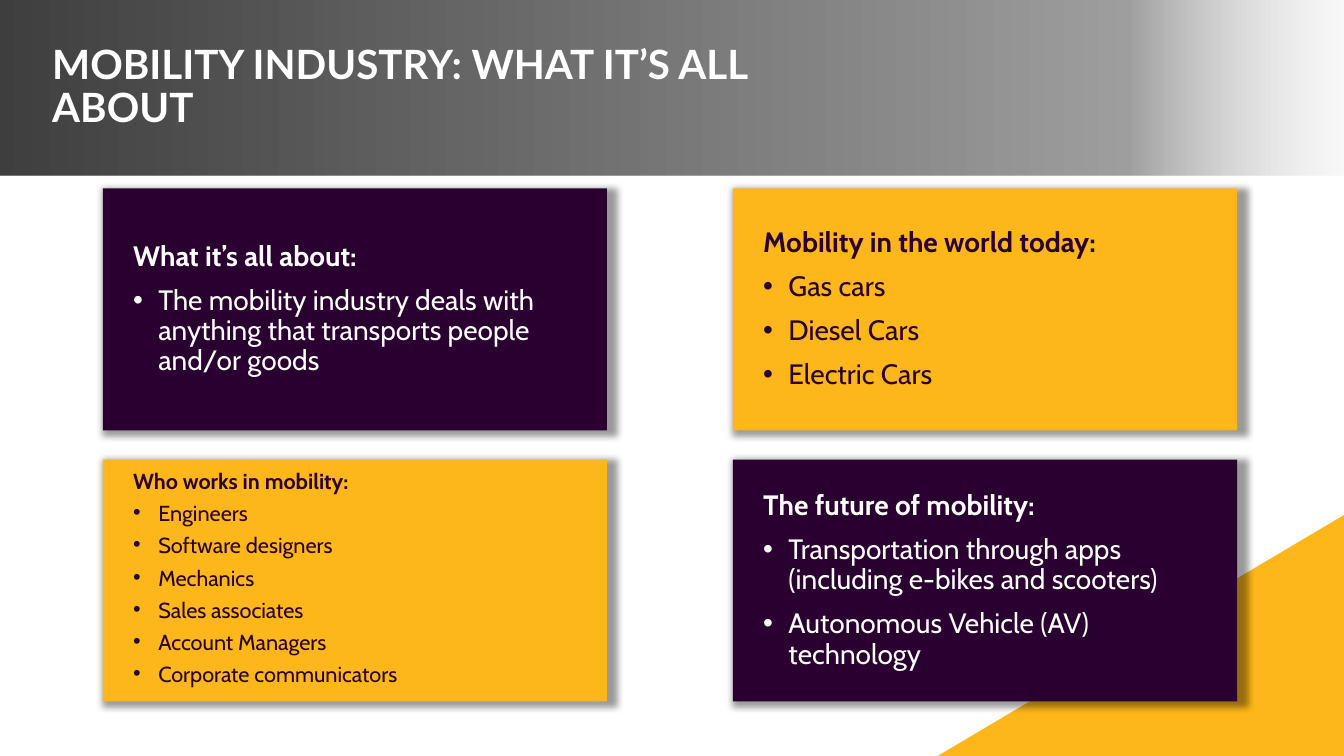
from pptx import Presentation
from pptx.dml.color import RGBColor as RGB
from pptx.enum.shapes import MSO_SHAPE as Kind
from pptx.enum.text import MSO_ANCHOR as Anchor, PP_ALIGN as Align
from pptx.oxml import parse_xml
from pptx.oxml.ns import nsdecls, qn
from pptx.util import Inches, Pt

TITLE = "MOBILITY INDUSTRY: WHAT IT’S ALL ABOUT"
CARDS = [
    ("What it’s all about:", [
        "The mobility industry deals with anything that transports people and/or goods",
    ]),
    ("Mobility in the world today:", ["Gas cars", "Diesel Cars", "Electric Cars"]),
    ("Who works in mobility:", [
        "Engineers", "Software designers", "Mechanics",
        "Sales associates", "Account Managers", "Corporate communicators",
    ]),
    ("The future of mobility:", [
        "Transportation through apps (including e-bikes and scooters)",
        "Autonomous Vehicle (AV) technology",
    ]),
]
FADE = [(0, "000000", 75), (84, "808080", 75), (100, "E7E6E6", 25)]


class Theme:
    white, plum, gold = "FFFFFF", "29002F", "FDB71A"
    head, body = "Lato", "Cabin"
    title, text, small = 28.8, 20, 15.5
    loose, tight, gap = 0.9, 0.7, 10


WIDE, HIGH = 13.33, 7.5
LEFT, TOP = 1.02, 1.87
CARD_W, CARD_H = 5, 2.4
STEP_X, STEP_Y = 6.25, 2.69
DENSE = 5


def add_block(slide, kind, x, y, w, h, color):
    block = slide.shapes.add_shape(kind, Inches(x), Inches(y), Inches(w), Inches(h))
    block.shadow.inherit = False
    block.line.fill.background()
    block.fill.solid()
    block.fill.fore_color.rgb = RGB.from_string(color)
    return block


def fade(block):
    stops = "".join(
        f'<a:gs pos="{at * 1000}"><a:srgbClr val="{color}">'
        f'<a:alpha val="{alpha * 1000}"/></a:srgbClr></a:gs>'
        for at, color, alpha in FADE)
    grad = parse_xml(f'<a:gradFill {nsdecls("a")} rotWithShape="1"><a:gsLst>{stops}</a:gsLst>'
                     '<a:lin ang="0" scaled="0"/></a:gradFill>')
    props = block._element.spPr
    props.replace(props.find(qn("a:solidFill")), grad)


def add_shade(block):
    shade = parse_xml(f'<a:outerShdw {nsdecls("a")} blurRad="{Pt(5)}" dist="0" dir="0" '
                      'sx="102000" sy="102000" algn="tl" rotWithShape="0">'
                      '<a:srgbClr val="000000"><a:alpha val="40000"/></a:srgbClr></a:outerShdw>')
    block._element.spPr.find(qn("a:effectLst")).append(shade)


def style(para, name, size, color, bold, space):
    para.alignment = Align.LEFT
    para.line_spacing = space
    for run in para.runs:
        font = run.font
        font.name, font.size, font.bold = name, Pt(size), bold
        font.color.rgb = RGB.from_string(color)


def add_bullet(para):
    props = para._p.get_or_add_pPr()
    props.set("marL", str(Inches(0.25)))
    props.set("indent", str(Inches(-0.25)))
    props.append(parse_xml(f'<a:buFont {nsdecls("a")} typeface="Arial"/>'))
    props.append(parse_xml(f'<a:buChar {nsdecls("a")} char="•"/>'))


def add_card(slide, spot, head, items):
    row, col = divmod(spot, 2)
    dark = row == col
    fill, ink = (Theme.plum, Theme.white) if dark else (Theme.gold, Theme.plum)
    dense = len(items) > DENSE
    size = Theme.small if dense else Theme.text
    space = Theme.tight if dense else Theme.loose
    card = add_block(slide, Kind.RECTANGLE, LEFT + col * STEP_X, TOP + row * STEP_Y,
                     CARD_W, CARD_H, fill)
    add_shade(card)
    frame = card.text_frame
    frame.word_wrap = True
    frame.vertical_anchor = Anchor.MIDDLE
    frame.margin_left = frame.margin_right = Inches(0.3)
    frame.margin_top = frame.margin_bottom = Inches(0.1)
    frame.text = "\n".join([head, *items])
    for i, para in enumerate(frame.paragraphs):
        style(para, Theme.body, size, ink, i == 0, space)
        if i:
            para.space_before = Pt(Theme.gap)
            add_bullet(para)


def main():
    deck = Presentation()
    deck.slide_width, deck.slide_height = Inches(WIDE), Inches(HIGH)
    slide = deck.slides.add_slide(deck.slide_layouts[6])

    corner = add_block(slide, Kind.RIGHT_TRIANGLE, 9.3, 5.11, 4.03, 2.39, Theme.gold)
    corner._element.spPr.find(qn("a:xfrm")).set("flipH", "1")
    fade(add_block(slide, Kind.RECTANGLE, 0, 0, WIDE, 1.74, Theme.plum))

    title = slide.shapes.add_textbox(Inches(0.42), Inches(0.51), Inches(8.4), Inches(0.72))
    frame = title.text_frame
    frame.word_wrap = True
    frame.vertical_anchor = Anchor.MIDDLE
    frame.text = TITLE
    style(frame.paragraphs[0], Theme.head, Theme.title, Theme.white, True, Theme.loose)

    for spot, (head, items) in enumerate(CARDS):
        add_card(slide, spot, head, items)
    deck.save("out.pptx")


if __name__ == "__main__":
    main()
